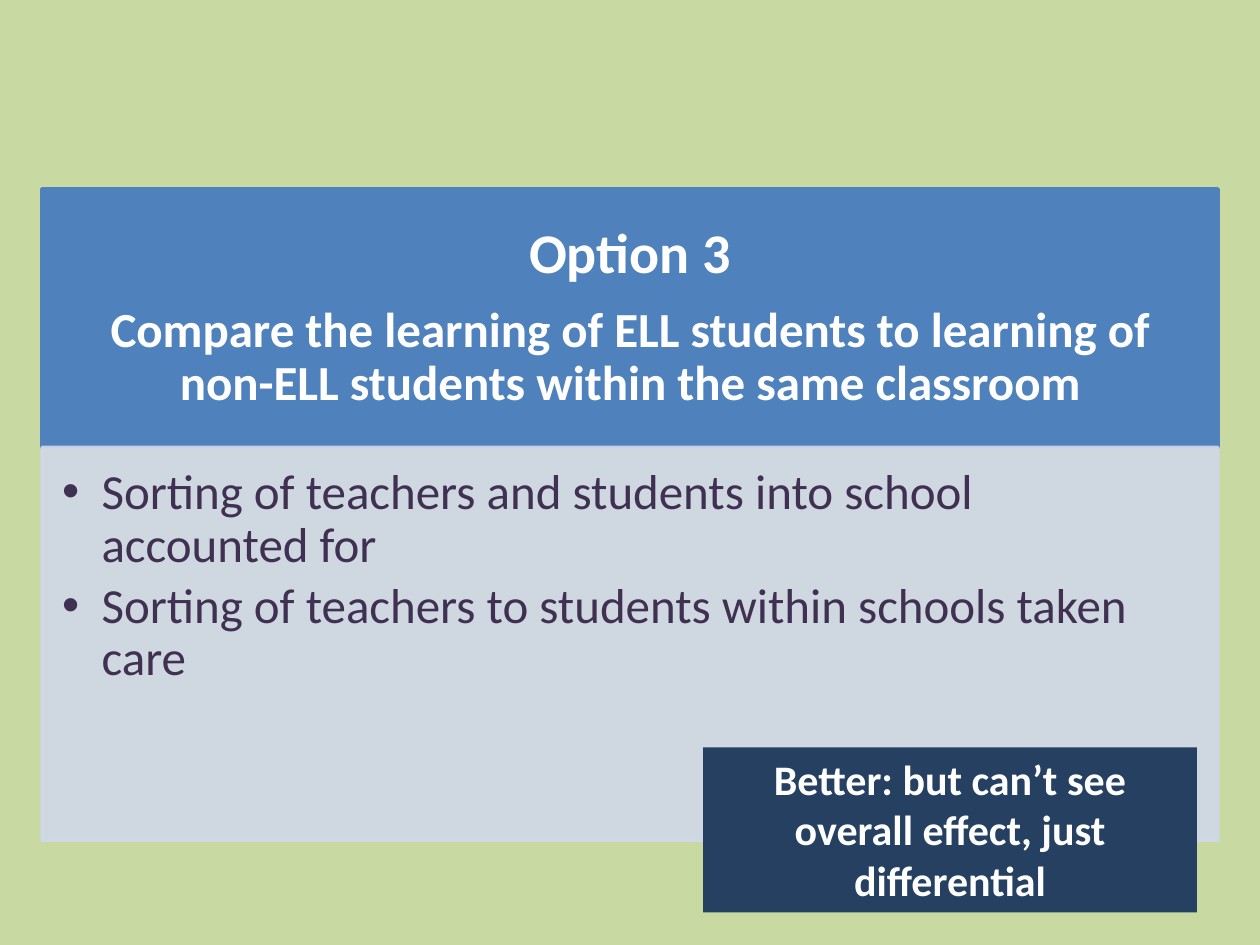
from dataclasses import dataclass
from lxml.etree import SubElement
from pptx import Presentation
from pptx.dml.color import RGBColor as RGB
from pptx.enum.text import MSO_ANCHOR as Anchor, MSO_AUTO_SIZE as Fit, PP_ALIGN as Align
from pptx.enum.shapes import MSO_SHAPE as Shape
from pptx.oxml.ns import qn
from pptx.util import Pt


@dataclass(frozen=True)
class Theme:
    font: str = "Calibri"
    back: str = "C8DAA2"
    head: str = "4F81BD"
    body: str = "D0D8E8"
    note: str = "254061"
    light: str = "FFFFFF"
    ink: str = "403152"
    title: int = 32
    text: int = 28
    small: int = 24


class Deck:
    def __init__(self, theme):
        self.theme = theme
        self.prs = Presentation()
        self.prs.slide_width, self.prs.slide_height = Pt(720), Pt(540)
        self.slide = self.prs.slides.add_slide(self.prs.slide_layouts[6])
        fill = self.slide.background.fill
        fill.solid()
        fill.fore_color.rgb = RGB.from_string(theme.back)

    def panel(self, box, color, pad=(7.2, 3.6, 7.2, 3.6), anchor=Anchor.MIDDLE,
              edge=True, alpha=100):
        """Add a filled rectangle and return its text frame."""
        rect = self.slide.shapes.add_shape(Shape.RECTANGLE, *map(Pt, box))
        rect.shadow.inherit = False
        paints = [rect.fill]
        if edge:
            rect.line.width = Pt(2)
            paints.append(rect.line.fill)
        else:
            rect.line.fill.background()
        for paint in paints:
            paint.solid()
            paint.fore_color.rgb = RGB.from_string(color)
        if alpha < 100:
            for tint in rect._element.spPr.iter(qn("a:srgbClr")):
                SubElement(tint, qn("a:alpha"), val=str(alpha * 1000))
        frame = rect.text_frame
        frame.word_wrap = True
        frame.vertical_anchor = anchor
        (frame.margin_left, frame.margin_top,
         frame.margin_right, frame.margin_bottom) = map(Pt, pad)
        return frame

    def label(self, frame, lines, color, bold=True, align=Align.CENTER,
              lead=1.0, gap=0, indent=0):
        """Set (text, size) lines; an indent makes them bullets."""
        for i, (text, size) in enumerate(lines):
            para = frame.add_paragraph() if i else frame.paragraphs[0]
            para.text = text
            para.alignment = align
            para.line_spacing = lead
            para.space_before = Pt(gap if i else 0)
            font = para.font
            font.name, font.size, font.bold = self.theme.font, Pt(size), bold
            font.color.rgb = RGB.from_string(color)
            if indent:
                props = para._p.get_or_add_pPr()
                props.set("marL", str(Pt(indent)))
                props.set("indent", str(-Pt(indent)))
                SubElement(props, qn("a:buFont"), typeface="Arial")
                SubElement(props, qn("a:buChar"), char="•")
                # The schema wants the default run style last
                props.append(props.find(qn("a:defRPr")))


def main():
    theme = Theme()
    deck = Deck(theme)
    left, top, width, split = 24, 108, 672, 255.6

    # Heading panel
    head = deck.panel((left, top, width, split - top), theme.head, (18, 10, 18, 10))
    deck.label(head, [
        ("Option 3", theme.title),
        ("Compare the learning of ELL students to learning of non-ELL "
         "students within the same classroom", theme.text),
    ], theme.light, lead=0.9, gap=11.2)

    # Bullet panel
    body = deck.panel((left, split, width, 224.6), theme.body,
                      (11.5, 11.5, 16, 17), Anchor.TOP, alpha=90)
    deck.label(body, [
        ("Sorting of teachers and students into school accounted for", theme.text),
        ("Sorting of teachers to students within schools taken care", theme.text),
    ], theme.ink, bold=False, align=Align.LEFT, lead=0.9, gap=4.2, indent=22.5)

    # Verdict box
    note = deck.panel((401.8, 427, 282.2, 94.3), theme.note,
                      anchor=Anchor.TOP, edge=False)
    note.auto_size = Fit.SHAPE_TO_FIT_TEXT
    deck.label(note, [("Better: but can’t see overall effect, just differential",
                       theme.small)], theme.light)

    deck.prs.save("out.pptx")


if __name__ == "__main__":
    main()
